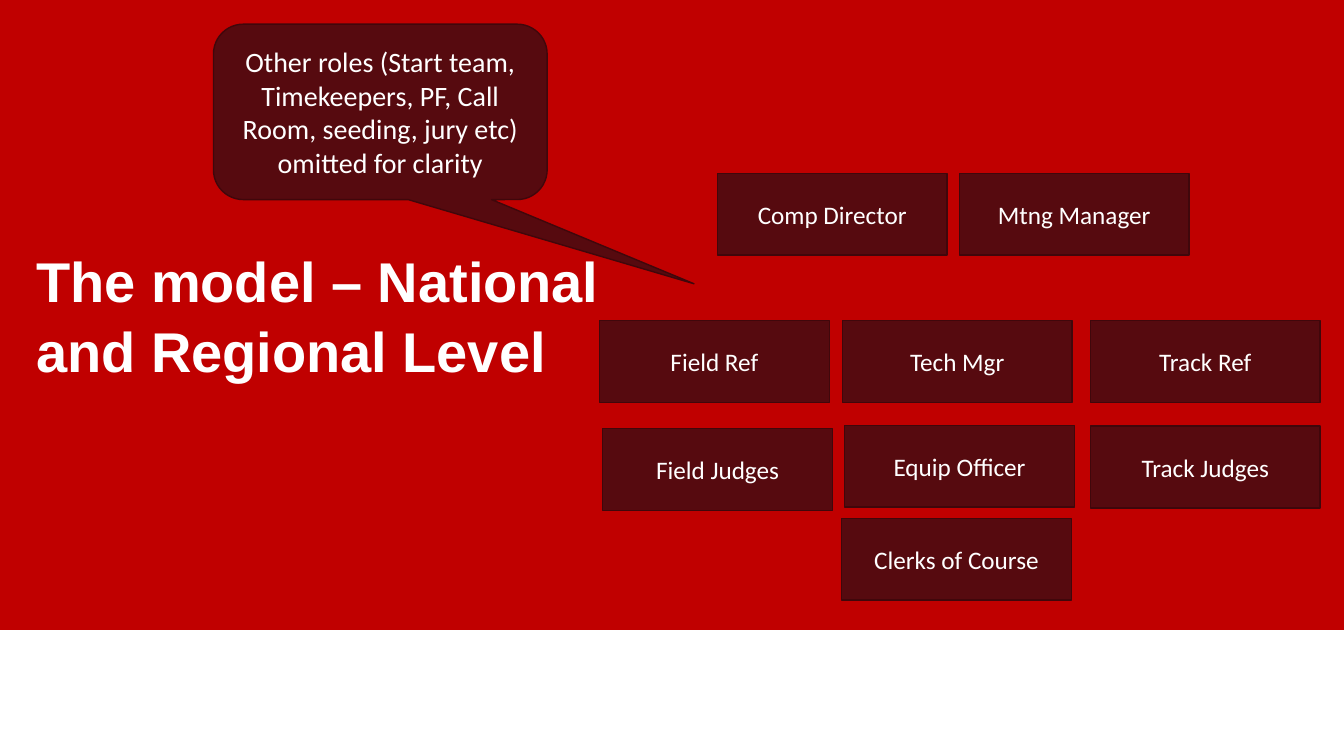
from pptx import Presentation
from pptx.dml.color import RGBColor
from pptx.enum.shapes import MSO_SHAPE
from pptx.enum.text import MSO_ANCHOR, PP_ALIGN
from pptx.util import Cm, Pt

RED, MAROON, EDGE, WHITE = "C00000", "560A0F", "40070B", "FFFFFF"
ROLE_WIDTH, ROLE_HEIGHT = 5.79, 2.06
ROLES = [
    ("Comp Director", 18.08, 4.37),
    ("Mtng Manager", 24.18, 4.37),
    ("Field Ref", 15.11, 8.08),
    ("Tech Mgr", 21.23, 8.08),
    ("Track Ref", 27.48, 8.08),
    ("Field Judges", 15.19, 10.8),
    ("Equip Officer", 21.29, 10.72),
    ("Track Judges", 27.48, 10.74),
    ("Clerks of Course", 21.21, 13.06),
]


def paint(fill, colour):
    """Give a fill one solid colour."""
    fill.solid()
    fill.fore_color.rgb = RGBColor.from_string(colour)


def write(shape, text, size=18, font="Calibri", bold=False,
          align=PP_ALIGN.CENTER, anchor=MSO_ANCHOR.MIDDLE, spacing=1.0):
    """Put formatted white text in a shape."""
    frame = shape.text_frame
    frame.word_wrap = True
    frame.vertical_anchor = anchor
    para = frame.paragraphs[0]
    para.text = text
    para.alignment = align
    para.line_spacing = spacing
    for span in para.runs:
        span.font.size = Pt(size)
        span.font.name = font
        span.font.bold = bold
        paint(span.font.fill, WHITE)


def add_block(page, kind, left, top, width, height, fill=MAROON, line=EDGE):
    """Add a filled shape, outlined when a line colour is given."""
    shape = page.shapes.add_shape(kind, Cm(left), Cm(top), Cm(width), Cm(height))
    shape.shadow.inherit = False
    paint(shape.fill, fill)
    if line:
        paint(shape.line.fill, line)
        shape.line.width = Pt(1)
    else:
        shape.line.fill.background()
    return shape


def add_title(page, text):
    """Add the slide heading."""
    box = page.shapes.add_textbox(Cm(0.66), Cm(6.03), Cm(29.64), Cm(3.6))
    write(box, text, size=40, font="Arial", bold=True, align=PP_ALIGN.LEFT,
          anchor=MSO_ANCHOR.TOP, spacing=1.04)


def add_role(page, name, left, top):
    """Add one role box."""
    role = add_block(page, MSO_SHAPE.RECTANGLE, left, top, ROLE_WIDTH, ROLE_HEIGHT)
    write(role, name)


def add_callout(page, text):
    """Add the speech bubble that points at the role chart."""
    callout = add_block(page, MSO_SHAPE.ROUNDED_RECTANGULAR_CALLOUT,
                        5.38, 0.61, 8.41, 4.42)
    for index, value in enumerate((0.94, 0.98, 0.17)):
        callout.adjustments[index] = value
    write(callout, text, size=20)


def main():
    """Build the slide and save it."""
    deck = Presentation()
    deck.slide_width, deck.slide_height = Cm(33.87), Cm(19.05)
    page = deck.slides.add_slide(deck.slide_layouts[6])
    paint(page.background.fill, RED)
    add_block(page, MSO_SHAPE.RECTANGLE, 0, 15.88, 33.87, 3.17, fill=WHITE, line=None)
    add_title(page, "The model – National\vand Regional Level")
    for name, left, top in ROLES:
        add_role(page, name, left, top)
    add_callout(page, "Other roles (Start team, Timekeepers, PF, Call Room, "
                      "seeding, jury etc) omitted for clarity")
    deck.save("out.pptx")


if __name__ == "__main__":
    main()
